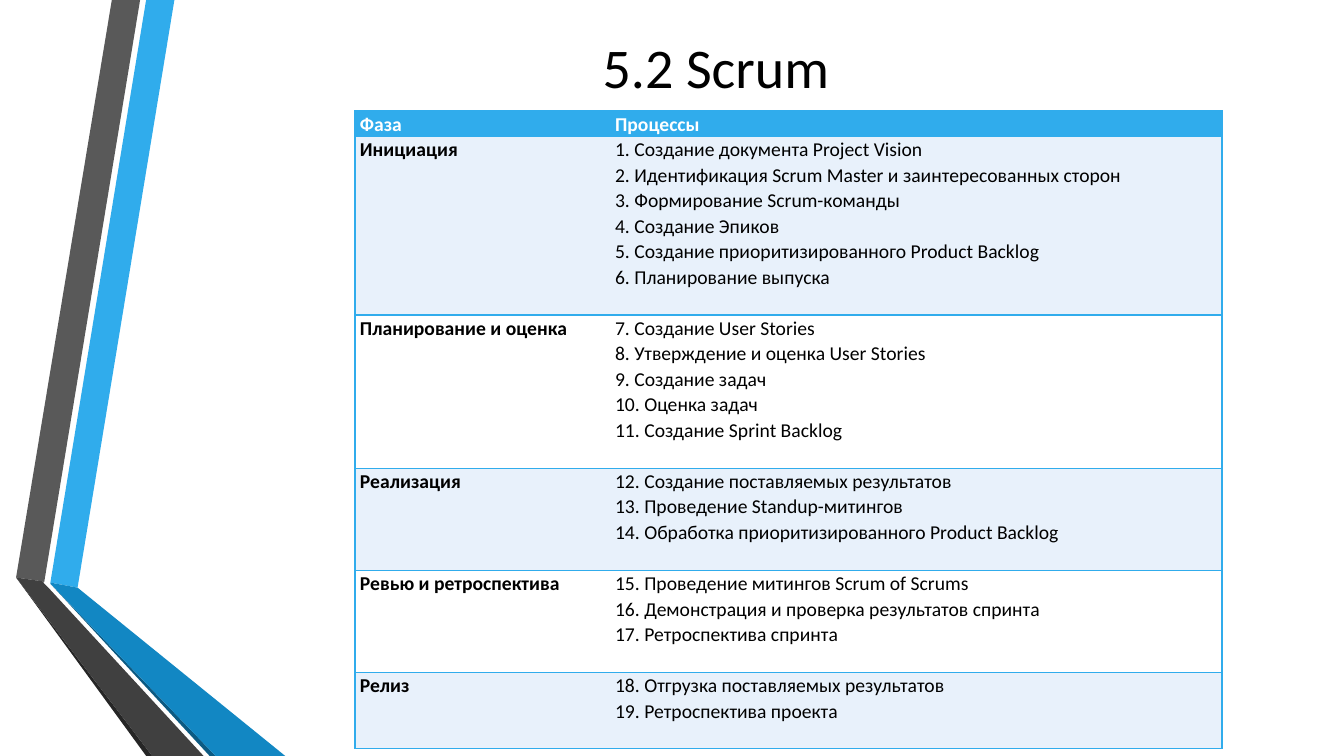
from itertools import count

from lxml.etree import SubElement
from pptx import Presentation
from pptx.dml.color import RGBColor
from pptx.enum.text import MSO_ANCHOR, PP_ALIGN
from pptx.oxml.ns import qn
from pptx.util import Inches, Pt

COLORS = {
    "blue": "30ACEC",
    "mid_blue": "1287C3",
    "deep_blue": "0C5A82",
    "gray": "595959",
    "dark_gray": "404040",
    "charcoal": "262626",
    "pale": "E8F1FB",
    "white": "FFFFFF",
    "black": "000000",
}

RIBBONS = [
    ("blue", [(0.5, 5.78), (0.77, 5.83), (1.73, 0), (1.45, 0)]),
    ("gray", [(1.39, 0), (1.11, 0), (0.16, 5.73), (0.44, 5.77)]),
    ("charcoal", [(0.16, 5.73), (1.45, 7.5), (1.51, 7.5)]),
    ("deep_blue", [(0.5, 5.79), (2.08, 7.5), (2.14, 7.5)]),
    ("mid_blue", [(0.5, 5.79), (2.14, 7.5), (2.83, 7.5), (0.77, 5.83), (0.5, 5.78)]),
    ("dark_gray", [(2.02, 7.5), (0.48, 5.83), (0.43, 5.78), (0.44, 5.77), (0.16, 5.73), (1.51, 7.5)]),
]

PHASES = {
    "Инициация": [
        "Создание документа Project Vision",
        "Идентификация Scrum Master и заинтересованных сторон",
        "Формирование Scrum-команды",
        "Создание Эпиков",
        "Создание приоритизированного Product Backlog",
        "Планирование выпуска",
    ],
    "Планирование и оценка": [
        "Создание User Stories",
        "Утверждение и оценка User Stories",
        "Создание задач",
        "Оценка задач",
        "Создание Sprint Backlog",
    ],
    "Реализация": [
        "Создание поставляемых результатов",
        "Проведение Standup-митингов",
        "Обработка приоритизированного Product Backlog",
    ],
    "Ревью и ретроспектива": [
        "Проведение митингов Scrum of Scrums",
        "Демонстрация и проверка результатов спринта",
        "Ретроспектива спринта",
    ],
    "Релиз": [
        "Отгрузка поставляемых результатов",
        "Ретроспектива проекта",
    ],
}


def apply(target, values):
    for name, value in values.items():
        setattr(target, name, value)


class ScrumSlide:
    font = "Calibri"
    title_size = Pt(40)
    body_size = Pt(14)
    cell_format = {
        "margin_left": Inches(0.05),
        "margin_right": Inches(0.05),
        "margin_top": 0,
        "margin_bottom": 0,
        "vertical_anchor": MSO_ANCHOR.TOP,
    }

    def __init__(self, deck):
        self.slide = deck.slides.add_slide(deck.slide_layouts[6])

    def color(self, name):
        return RGBColor.from_string(COLORS[name])

    def add_lines(self, frame, lines, size, color, bold=False, **paragraph_format):
        for index, line in enumerate(lines):
            paragraph = frame.add_paragraph() if index else frame.paragraphs[0]
            apply(paragraph, paragraph_format)
            run = paragraph.add_run()
            run.text = line
            apply(run.font, {"name": self.font, "size": size, "bold": bold})
            run.font.color.rgb = self.color(color)

    def ribbon(self, color, corners):
        points = [(Inches(x), Inches(y)) for x, y in corners]
        builder = self.slide.shapes.build_freeform(*points[0])
        builder.add_line_segments(points[1:], close=True)
        band = builder.convert_to_shape()
        band.shadow.inherit = False
        band.fill.solid()
        band.fill.fore_color.rgb = self.color(color)
        band.line.fill.background()

    def title(self, text, left, top, width, height):
        heading = self.slide.shapes.add_textbox(
            Inches(left), Inches(top), Inches(width), Inches(height))
        apply(heading.text_frame, {"word_wrap": True, "vertical_anchor": MSO_ANCHOR.MIDDLE})
        self.add_lines(heading.text_frame, [text], self.title_size, "black", alignment=PP_ALIGN.CENTER)

    def border(self, cell, inner_side):
        properties = cell._tc.get_or_add_tcPr()
        for side in ("lnL", "lnR", "lnT", "lnB"):
            edge = SubElement(properties, qn(f"a:{side}"), w=str(Pt(1)))
            if side == inner_side:
                SubElement(edge, qn("a:noFill"))
            else:
                paint = SubElement(edge, qn("a:solidFill"))
                SubElement(paint, qn("a:srgbClr"), val=COLORS["blue"])

    def cell(self, cell, lines, fill, color, bold, inner_side):
        apply(cell, self.cell_format)
        self.border(cell, inner_side)
        cell.fill.solid()
        cell.fill.fore_color.rgb = self.color(fill)
        self.add_lines(cell.text_frame, lines, self.body_size, color, bold, line_spacing=1.07)

    def phase_table(self, phases, left, top, widths, line_height):
        number = count(1)
        rows = [("Фаза", ["Процессы"])]
        for phase, processes in phases.items():
            rows.append((phase, [f"{next(number)}. {process}" for process in processes]))
        heights = [1] + [len(processes) + 1 for _, processes in rows[1:]]
        table = self.slide.shapes.add_table(
            len(rows), len(widths), Inches(left), Inches(top),
            Inches(sum(widths)), Inches(sum(heights) * line_height)).table
        apply(table, {"first_row": False, "horz_banding": False})
        for column, width in zip(table.columns, widths):
            column.width = Inches(width)
        for index, (phase, processes) in enumerate(rows):
            header = index == 0
            table.rows[index].height = Inches(heights[index] * line_height)
            fill = "blue" if header else ("white", "pale")[index % 2]
            color = "white" if header else "black"
            self.cell(table.cell(index, 0), [phase], fill, color, True, "lnR")
            self.cell(table.cell(index, 1), processes, fill, color, header, "lnL")


def main():
    deck = Presentation()
    apply(deck, {"slide_width": Inches(13.33), "slide_height": Inches(7.5)})
    scrum = ScrumSlide(deck)
    for color, corners in RIBBONS:
        scrum.ribbon(color, corners)
    scrum.title("5.2 Scrum", 1.62, 0.09, 10.96, 1.13)
    scrum.phase_table(PHASES, 3.52, 1.1, (2.53, 6.07), 6.33 / 25)
    deck.save("out.pptx")


if __name__ == "__main__":
    main()
